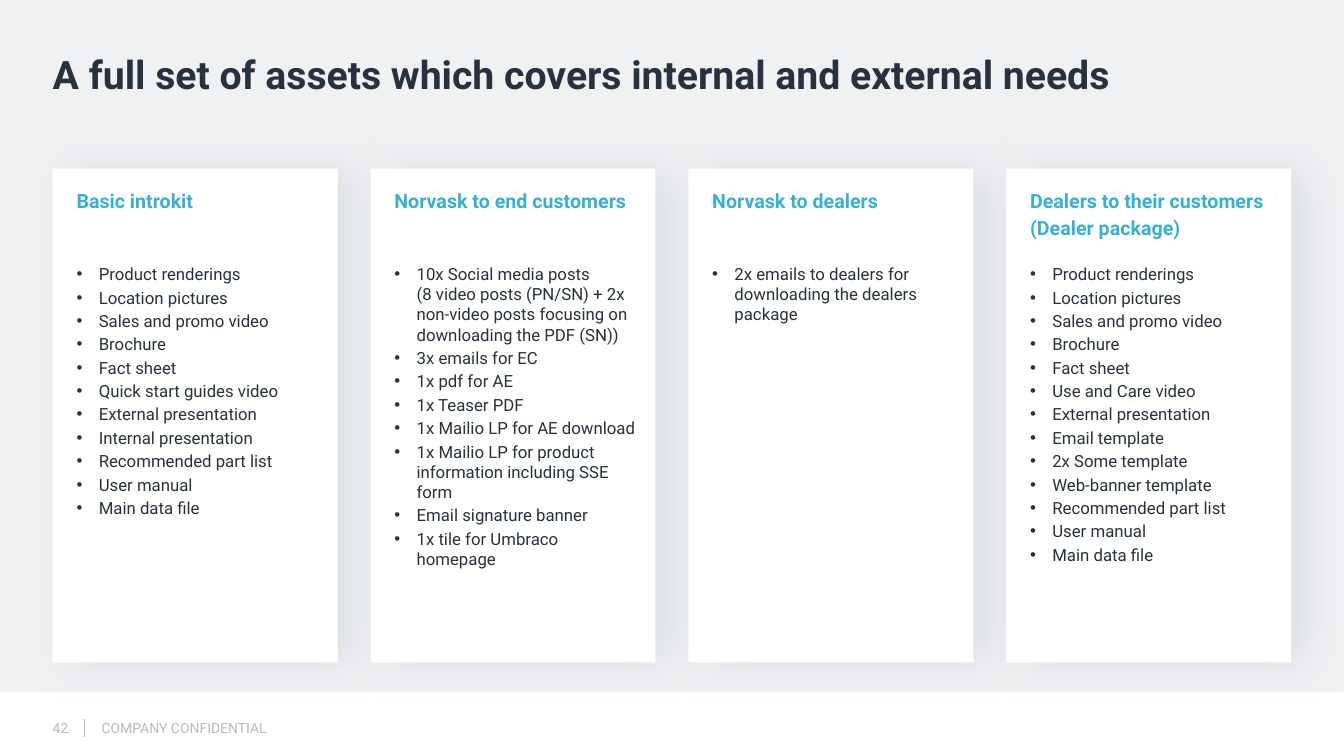
from lxml.etree import SubElement
from pptx import Presentation
from pptx.dml.color import RGBColor
from pptx.enum.shapes import MSO_CONNECTOR, MSO_SHAPE
from pptx.enum.text import MSO_ANCHOR, PP_ALIGN
from pptx.oxml.ns import qn
from pptx.util import Cm, Pt

FONT = "Roboto"
DARK, BLUE, GREY = "28313F", "38AFD9", "B3BBC5"
WHITE, PALE = "FFFFFF", "F0F1F3"

TITLE = "A full set of assets which covers internal and external needs"
PAGE, FOOTER = "42", "COMPANY CONFIDENTIAL"
CARDS = [
    (["Basic introkit"],
     ["Product renderings", "Location pictures", "Sales and promo video",
      "Brochure", "Fact sheet", "Quick start guides video",
      "External presentation", "Internal presentation",
      "Recommended part list", "User manual", "Main data file"]),
    (["Norvask to end customers"],
     ["10x Social media posts \v(8 video posts (PN/SN) + 2x non-video posts "
      "focusing on downloading the PDF (SN))",
      "3x emails for EC", "1x pdf for AE", "1x Teaser PDF",
      "1x Mailio LP for AE download",
      "1x Mailio LP for product information including SSE form",
      "Email signature banner", "1x tile for Umbraco homepage"]),
    (["Norvask to dealers"],
     ["2x emails to dealers for downloading the dealers package"]),
    (["Dealers to their customers", "(Dealer package)"],
     ["Product renderings", "Location pictures", "Sales and promo video",
      "Brochure", "Fact sheet", "Use and Care video",
      "External presentation", "Email template", "2x Some template",
      "Web-banner template", "Recommended part list", "User manual",
      "Main data file"]),
]

SLIDE_W, SLIDE_H = 33.87, 19.05
BAND_H = 17.43
LEFT, CARD_TOP, CARD_W, CARD_H, PITCH = 1.33, 4.25, 7.18, 12.44, 8.01
FOOT_TOP, FOOT_H = 18.13, 0.43


def rgb(color):
    return RGBColor.from_string(color)


def add_rect(s, x, y, w, h, color):
    sp = s.shapes.add_shape(MSO_SHAPE.RECTANGLE, Cm(x), Cm(y), Cm(w), Cm(h))
    sp.shadow.inherit = False
    sp.fill.solid()
    sp.fill.fore_color.rgb = rgb(color)
    sp.line.fill.background()
    return sp


def add_soft_shadow(sp):
    effects = sp._element.spPr.find(qn("a:effectLst"))
    shadow = SubElement(effects, qn("a:outerShdw"), blurRad=str(Pt(30)),
                        dist=str(Pt(11)), dir="0", algn="ctr", rotWithShape="0")
    color = SubElement(shadow, qn("a:srgbClr"), val=GREY)
    SubElement(color, qn("a:alpha"), val="35000")


def add_bullet(p):
    pPr = p._p.get_or_add_pPr()
    pPr.set("marL", str(Cm(0.56)))
    pPr.set("indent", str(-Cm(0.56)))
    SubElement(pPr, qn("a:buFont"), typeface="Arial")
    SubElement(pPr, qn("a:buChar"), char="•")


def write(sp, lines, size, color, bold=False, insets=(0, 0, 0, 0),
          anchor=MSO_ANCHOR.TOP, bullets=False):
    """Fill a shape with paragraphs; insets run left, top, right, bottom in cm."""
    tf = sp.text_frame
    tf.word_wrap = True
    tf.vertical_anchor = anchor
    tf.margin_left, tf.margin_top, tf.margin_right, tf.margin_bottom = map(Cm, insets)
    for i, line in enumerate(lines):
        p = tf.add_paragraph() if i else tf.paragraphs[0]
        p.text = line
        p.alignment = PP_ALIGN.LEFT
        if i:
            p.space_before = Pt(round(size * 0.19, 1))
        if bullets:
            add_bullet(p)
        for r in p.runs:
            r.font.name, r.font.size, r.font.bold = FONT, Pt(size), bold
            r.font.color.rgb = rgb(color)
    return tf


def add_text(s, x, y, w, h, lines, size, color, **style):
    sp = s.shapes.add_textbox(Cm(x), Cm(y), Cm(w), Cm(h))
    return write(sp, lines, size, color, **style)


def add_card(s, x, heading, items):
    card = add_rect(s, x, CARD_TOP, CARD_W, CARD_H, WHITE)
    add_soft_shadow(card)
    write(card, items, 12, DARK, insets=(0.6, 2.4, 0.5, 0.6), bullets=True)
    add_text(s, x, CARD_TOP, CARD_W, 2.16, heading, 14, BLUE, bold=True,
             insets=(0.6, 0.5, 0.4, 0))


def add_footer(s):
    for x, w, text in ((LEFT, 0.76, PAGE), (2.56, 5.8, FOOTER)):
        add_text(s, x, FOOT_TOP, w, FOOT_H, [text], 10, GREY,
                 anchor=MSO_ANCHOR.MIDDLE)
    rule = s.shapes.add_connector(MSO_CONNECTOR.STRAIGHT, Cm(2.12), Cm(FOOT_TOP),
                                  Cm(2.12), Cm(FOOT_TOP + FOOT_H))
    rule.line.color.rgb = rgb(GREY)
    rule.line.width = Pt(0.25)
    SubElement(rule._element.spPr, qn("a:effectLst"))


def main():
    prs = Presentation()
    prs.slide_width, prs.slide_height = Cm(SLIDE_W), Cm(SLIDE_H)
    s = prs.slides.add_slide(prs.slide_layouts[6])
    add_rect(s, 0, 0, SLIDE_W, BAND_H, PALE)
    for i, (heading, items) in enumerate(CARDS):
        add_card(s, LEFT + i * PITCH, heading, items)
    add_footer(s)
    tf = add_text(s, LEFT, 1.37, 31.2, 1.07, [TITLE], 28, DARK, bold=True)
    tf.paragraphs[0].line_spacing = Pt(31)
    prs.save("out.pptx")


if __name__ == "__main__":
    main()
